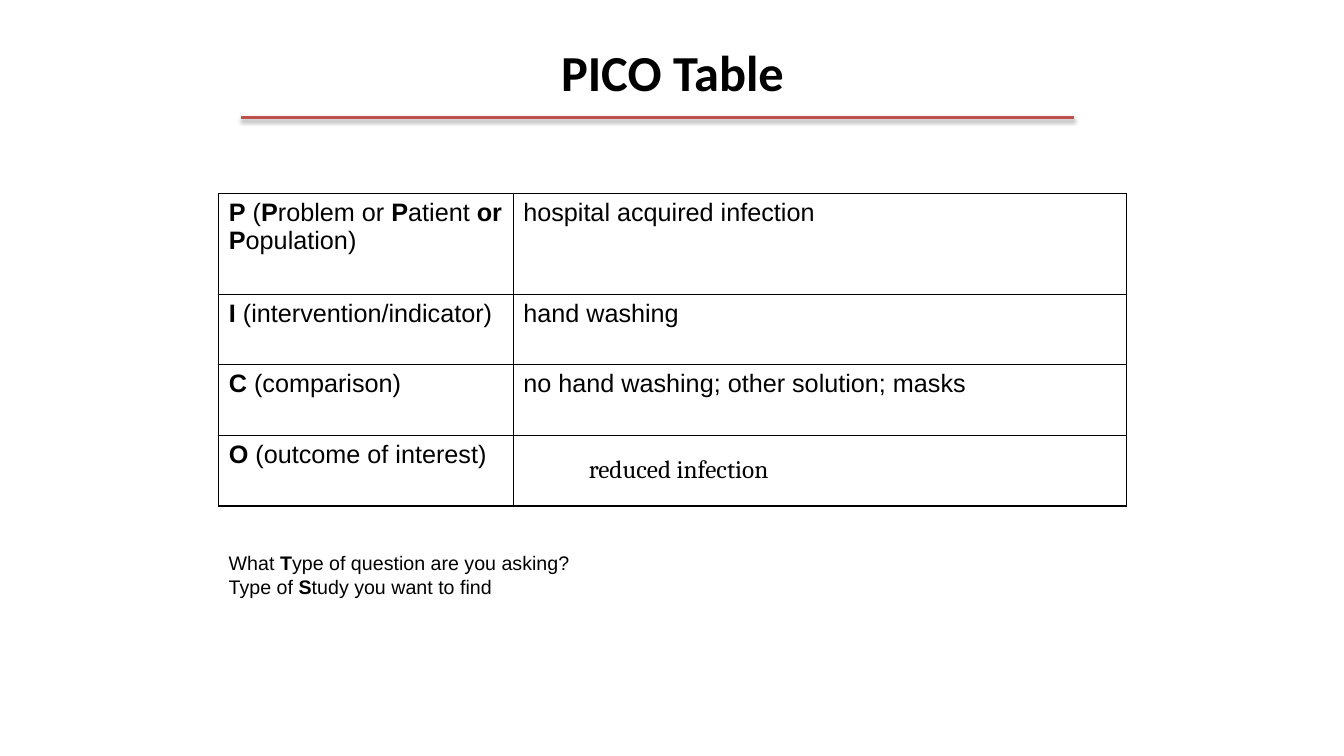
from lxml import etree
from pptx import Presentation
from pptx.dml.color import RGBColor
from pptx.enum.shapes import MSO_CONNECTOR
from pptx.enum.text import MSO_ANCHOR, MSO_AUTO_SIZE, PP_ALIGN
from pptx.oxml import parse_xml
from pptx.oxml.ns import nsdecls, qn
from pptx.util import Inches, Pt

STRAIGHT = MSO_CONNECTOR.STRAIGHT
TOP, MIDDLE = MSO_ANCHOR.TOP, MSO_ANCHOR.MIDDLE
CENTER = PP_ALIGN.CENTER
GROW = MSO_AUTO_SIZE.SHAPE_TO_FIT_TEXT

BLACK = RGBColor(0x00, 0x00, 0x00)
RED = RGBColor(0xC0, 0x50, 0x4D)

# Slide size and the content column shared by title, table and questions
SLIDE_W, SLIDE_H = Inches(13.33), Inches(7.5)
CONTENT_LEFT, CONTENT_W = Inches(2.17), Inches(9)
COLUMN_WIDTHS = (Inches(2.92), Inches(6.08))
ROW_HEIGHTS = (Inches(1),) + (Inches(0.7),) * 3

# Asterisks enclose bold text
PICO_ROWS = [
    ("*P* (*P*roblem or *P*atient *or P*opulation)", "hospital acquired infection"),
    ("*I *(intervention/indicator)", "hand washing"),
    ("*C* (comparison)", "no hand washing; other solution; masks"),
    ("*O* (outcome of interest)", "reduced infection"),
]
QUESTIONS = [
    "What *T*ype of question are you asking?",
    "Type of *S*tudy you want to find",
]


def write(paragraph, marked_text, size, font="Arial"):
    """Fill a paragraph, with bold on for each part between asterisks."""
    for index, part in enumerate(marked_text.split("*")):
        if not part:
            continue
        run = paragraph.add_run()
        run.text = part
        look = {"name": font, "size": Pt(size), "bold": index % 2 == 1}
        for attribute, value in look.items():
            setattr(run.font, attribute, value)
        run.font.color.rgb = BLACK


def add_title(slide, text):
    title = slide.shapes.title
    place = {"left": CONTENT_LEFT, "top": Inches(0.17),
             "width": CONTENT_W, "height": Inches(1.08)}
    for attribute, value in place.items():
        setattr(title, attribute, value)
    title.text_frame.vertical_anchor = MIDDLE
    heading = title.text_frame.paragraphs[0]
    heading.alignment = CENTER
    write(heading, f"*{text}*", 36, "Calibri")


def add_title_rule(slide):
    level = Inches(1.17)
    rule = slide.shapes.add_connector(STRAIGHT, Inches(2.39), level, Inches(10.65), level)
    rule.line.color.rgb = RED
    rule.line.width = Pt(2)
    # Soft shadow below the rule
    rule._element.spPr.append(parse_xml(
        f'<a:effectLst {nsdecls("a")}>'
        '<a:outerShdw blurRad="40000" dist="20000" dir="5400000" rotWithShape="0">'
        '<a:srgbClr val="000000"><a:alpha val="35000"/></a:srgbClr>'
        '</a:outerShdw></a:effectLst>'))


def add_borders(cell):
    properties = cell._tc.get_or_add_tcPr()
    for position, side in enumerate(("lnL", "lnR", "lnT", "lnB")):
        border = etree.Element(qn(f"a:{side}"), w=str(Pt(1)))
        fill = etree.SubElement(border, qn("a:solidFill"))
        etree.SubElement(fill, qn("a:srgbClr"), val=str(BLACK))
        properties.insert(position, border)


def add_pico_table(slide):
    table = slide.shapes.add_table(
        len(PICO_ROWS), len(COLUMN_WIDTHS), CONTENT_LEFT, Inches(1.92),
        CONTENT_W, sum(ROW_HEIGHTS)).table
    table.first_row = table.horz_banding = False
    for column, width in zip(table.columns, COLUMN_WIDTHS):
        column.width = width
    for row, height, texts in zip(table.rows, ROW_HEIGHTS, PICO_ROWS):
        row.height = height
        for cell, text in zip(row.cells, texts):
            is_outcome = text == PICO_ROWS[-1][1]
            cell.fill.background()
            add_borders(cell)
            cell.vertical_anchor = MIDDLE if is_outcome else TOP
            cell.margin_left = Inches(0.75 if is_outcome else 0.1)
            write(cell.text_frame.paragraphs[0], text, 18,
                  "Cambria" if is_outcome else "Arial")


def add_questions(slide):
    frame = slide.shapes.add_textbox(
        CONTENT_LEFT, Inches(5.42), Inches(6.17), Inches(1.01)).text_frame
    frame.word_wrap = True
    frame.auto_size = GROW
    for index, question in enumerate(QUESTIONS):
        paragraph = frame.add_paragraph() if index else frame.paragraphs[0]
        write(paragraph, question, 14)


def main():
    deck = Presentation()
    deck.slide_width, deck.slide_height = SLIDE_W, SLIDE_H
    title_only = deck.slide_layouts[5]
    slide = deck.slides.add_slide(title_only)
    add_title_rule(slide)
    add_title(slide, "PICO Table")
    add_pico_table(slide)
    add_questions(slide)
    deck.save("out.pptx")


if __name__ == "__main__":
    main()
